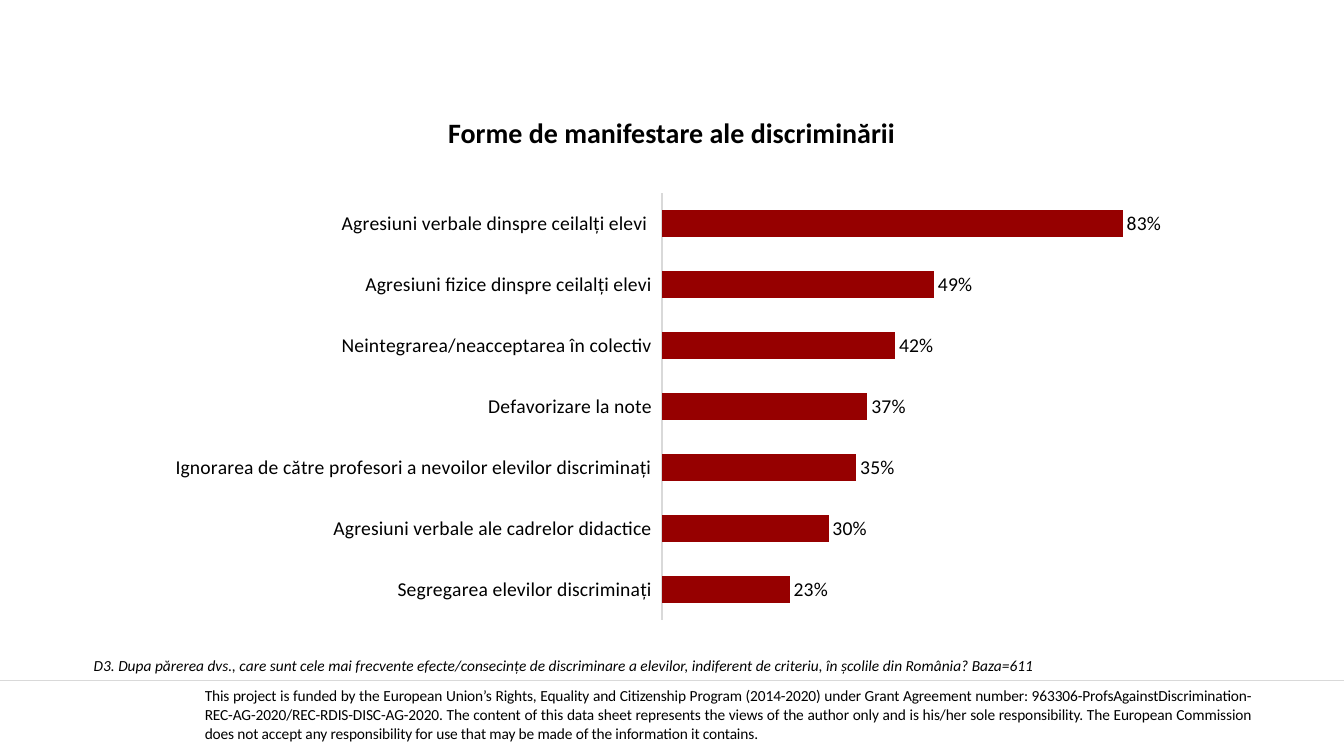
from lxml.etree import SubElement
from pptx import Presentation
from pptx.chart.data import CategoryChartData
from pptx.dml.color import RGBColor
from pptx.enum.chart import XL_CHART_TYPE as Chart, XL_LABEL_POSITION as LabelPos
from pptx.enum.chart import XL_TICK_LABEL_POSITION as TickPos, XL_TICK_MARK as Tick
from pptx.enum.shapes import MSO_CONNECTOR as Connector
from pptx.enum.text import MSO_ANCHOR as Anchor, MSO_AUTO_SIZE as AutoSize, PP_ALIGN as Align
from pptx.oxml import parse_xml
from pptx.oxml.ns import nsdecls, qn
from pptx.util import Cm, Pt

FORMS = {
    "Agresiuni verbale dinspre ceilalți elevi ": 0.83,
    "Agresiuni fizice dinspre ceilalți elevi": 0.49,
    "Neintegrarea/neacceptarea în colectiv": 0.42,
    "Defavorizare la note": 0.37,
    "Ignorarea de către profesori a nevoilor elevilor discriminați": 0.35,
    "Agresiuni verbale ale cadrelor didactice": 0.3,
    "Segregarea elevilor discriminați": 0.23,
}
QUESTION = (
    "D3. Dupa părerea dvs., care sunt cele mai frecvente efecte/consecințe de discriminare "
    "a elevilor, indiferent de criteriu, în școlile din România? Baza=611"
)
FUNDING = (
    "This project is funded by the European Union’s Rights, Equality and Citizenship Program "
    "(2014-2020) under Grant Agreement number: 963306-ProfsAgainstDiscrimination-REC-AG-2020/"
    "REC-RDIS-DISC-AG-2020. The content of this data sheet represents the views of the author "
    "only and is his/her sole responsibility. The European Commission does not accept any "
    "responsibility for use that may be made of the information it contains."
)


def color(value):
    return RGBColor.from_string(value)


class SurveySlide:
    FONT = "Calibri"
    INK = "000000"
    RULE = "D9D9D9"
    BAR = "960000"
    PERCENT = "###0%"

    def __init__(self, deck):
        self.slide = deck.slides.add_slide(deck.slide_layouts[5])
        self.shapes = self.slide.shapes

    def style(self, font, size, bold=False, italic=False):
        font.name, font.size = self.FONT, Pt(size)
        font.bold, font.italic = bold, italic
        font.color.rgb = color(self.INK)

    def title(self, text, left, top, width, height):
        heading = self.shapes.title
        heading.left, heading.top = Cm(left), Cm(top)
        heading.width, heading.height = Cm(width), Cm(height)
        frame = heading.text_frame
        frame.text = text
        frame.vertical_anchor = Anchor.MIDDLE
        line = frame.paragraphs[0]
        line.alignment, line.line_spacing = Align.CENTER, 0.9
        self.style(line.font, 20, bold=True)

    def note(self, text, left, top, width, height):
        frame = self.shapes.add_textbox(Cm(left), Cm(top), Cm(width), Cm(height)).text_frame
        frame.word_wrap = True
        frame.auto_size = AutoSize.SHAPE_TO_FIT_TEXT
        frame.text = text
        self.style(frame.paragraphs[0].font, 11, italic=True)

    def rule(self, top, width):
        line = self.shapes.add_connector(Connector.STRAIGHT, 0, Cm(top), width, Cm(top))
        line.line.color.rgb = color(self.RULE)
        line.line.width = Pt(0.5)
        SubElement(line._element.spPr, qn("a:effectLst"))

    def statement(self, text, left, top, width, height):
        table = self.shapes.add_table(1, 1, Cm(left), Cm(top), Cm(width), Cm(height)).table
        table.first_row = table.horz_banding = False
        cell = table.cell(0, 0)
        cell.fill.background()
        cell.margin_left = cell.margin_right = cell.margin_top = cell.margin_bottom = 0
        cell.vertical_anchor = Anchor.MIDDLE
        cell.text = text
        wording = cell.text_frame.paragraphs[0]
        wording.alignment = Align.JUSTIFY
        self.style(wording.font, 11)
        wording.runs[0]._r.get_or_add_rPr().set("spc", "-10")

    def bars(self, values, left, top, width, height):
        data = CategoryChartData(number_format=self.PERCENT)
        data.categories = list(values)
        data.add_series("Series 1", list(values.values()))
        chart = self.shapes.add_chart(
            Chart.BAR_CLUSTERED, Cm(left), Cm(top), Cm(width), Cm(height), data
        ).chart
        chart.has_legend = chart.has_title = False
        self.style(chart.font, 10)

        forms = chart.category_axis
        forms.reverse_order = True
        forms.major_tick_mark = forms.minor_tick_mark = Tick.NONE
        forms.tick_label_position = TickPos.LOW
        forms.format.line.color.rgb = color(self.RULE)
        forms.format.line.width = Pt(0.75)
        self.style(forms.tick_labels.font, 14)

        share = chart.value_axis
        share.minimum_scale, share.maximum_scale = 0, 0.9
        share.has_major_gridlines = False
        share.visible = False

        plot = chart.plots[0]
        plot.gap_width, plot.vary_by_categories = 128, False
        fill = plot.series[0].format.fill
        fill.solid()
        fill.fore_color.rgb = color(self.BAR)
        labels = plot.series[0].data_labels
        labels.show_value = True
        labels.position = LabelPos.OUTSIDE_END
        labels.number_format, labels.number_format_is_linked = self.PERCENT, False
        self.style(labels.font, 14)
        self.plot_area(chart, x=0.49, y=0.02, w=0.49, h=0.96)

    def plot_area(self, chart, **fractions):
        area = chart._chartSpace.chart.plotArea
        for old in area.findall(qn("c:layout")):
            area.remove(old)
        places = "".join(f'<c:{key} val="{part}"/>' for key, part in fractions.items())
        area.insert(0, parse_xml(
            f'<c:layout {nsdecls("c")}><c:manualLayout><c:layoutTarget val="inner"/>'
            f'<c:xMode val="edge"/><c:yMode val="edge"/>{places}</c:manualLayout></c:layout>'
        ))


def main():
    deck = Presentation()
    deck.slide_width, deck.slide_height = Cm(33.87), Cm(19.05)
    survey = SurveySlide(deck)
    survey.statement(FUNDING, 5.16, 16.71, 26.39, 2.64)
    survey.bars(FORMS, 4.09, 4.65, 25.7, 11.2)
    survey.title("Forme de manifestare ale discriminării", 7.77, 2.57, 18.31, 1.63)
    survey.rule(17.15, deck.slide_width)
    survey.note(QUESTION, 2.11, 16.41, 30.61, 0.74)
    deck.save("out.pptx")


if __name__ == "__main__":
    main()
